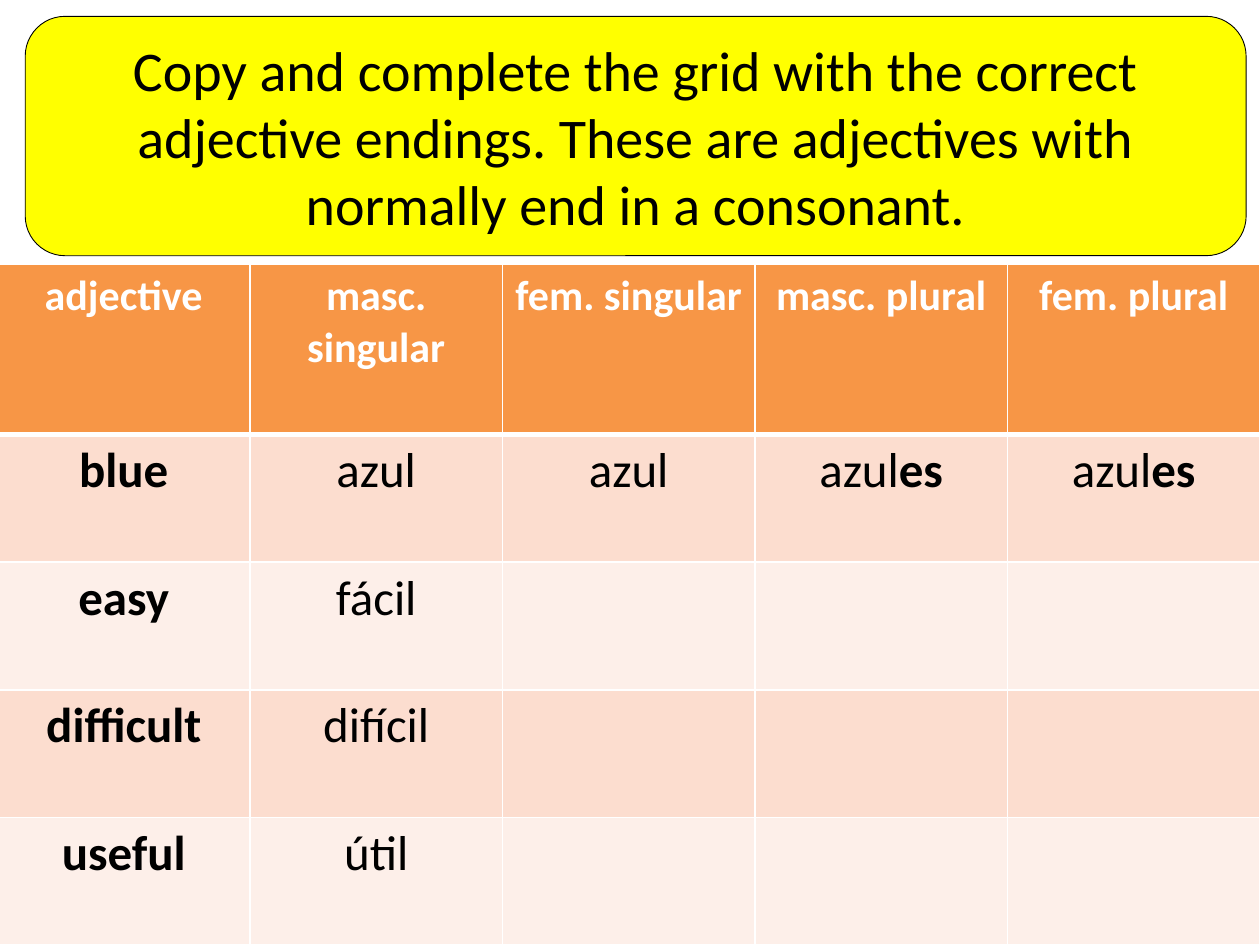
from dataclasses import dataclass

from lxml import etree
from pptx import Presentation
from pptx.dml.color import RGBColor
from pptx.enum.shapes import MSO_SHAPE
from pptx.enum.text import MSO_ANCHOR, PP_ALIGN
from pptx.oxml.ns import qn
from pptx.util import Inches, Pt

ROUNDED = MSO_SHAPE.ROUNDED_RECTANGLE
CENTER = PP_ALIGN.CENTER
MIDDLE = MSO_ANCHOR.MIDDLE


@dataclass(frozen=True)
class Theme:
    font: str = "Calibri"
    black: str = "000000"
    white: str = "FFFFFF"
    yellow: str = "FFFF00"
    orange: str = "F79646"
    bands: tuple = ("FCDDCF", "FDEFE9")
    title_size: int = 32
    header_size: int = 24
    body_size: int = 28


THEME = Theme()

INSTRUCTION = ("Copy and complete the grid with the correct adjective endings. "
               "These are adjectives with normally end in a consonant.")
HEADERS = ["adjective", "masc. singular", "fem. singular", "masc. plural", "fem. plural"]
# Each row: the English adjective, then (stem, ending) for each Spanish form.
ADJECTIVES = [
    ("blue", [("azul", ""), ("azul", ""), ("azul", "es"), ("azul", "es")]),
    ("easy", [("fácil", "")]),
    ("difficult", [("difícil", "")]),
    ("useful", [("útil", "")]),
]


def add_text(frame, text, size, color=THEME.black, bold=False):
    """Append a centred run to the frame's first paragraph."""
    para = frame.paragraphs[0]
    para.alignment = CENTER
    span = para.add_run()
    span.text = text
    span.font.name = THEME.font
    span.font.size = Pt(size)
    span.font.bold = bold
    span.font.color.rgb = RGBColor.from_string(color)


def style_cell(cell, fill, bottom_width=1, top_width=1):
    """Give the cell white borders, then its fill."""
    properties = cell._tc.get_or_add_tcPr()
    widths = {"a:lnL": 1, "a:lnR": 1, "a:lnT": top_width, "a:lnB": bottom_width}
    for tag, width in widths.items():
        line = etree.SubElement(properties, qn(tag), w=str(Pt(width)))
        solid = etree.SubElement(line, qn("a:solidFill"))
        etree.SubElement(solid, qn("a:srgbClr"), val=THEME.white)
    cell.fill.solid()
    cell.fill.fore_color.rgb = RGBColor.from_string(fill)


def add_adjective_grid(page, left, top, width, height, header_height):
    row_count, column_count = len(ADJECTIVES) + 1, len(HEADERS)
    grid = page.shapes.add_table(row_count, column_count, left, top, width, height).table
    for column in grid.columns:
        column.width = width // column_count
    for index, row in enumerate(grid.rows):
        row.height = (height - header_height) // len(ADJECTIVES) if index else header_height

    for cell, header in zip(grid.rows[0].cells, HEADERS):
        style_cell(cell, THEME.orange, bottom_width=3)
        add_text(cell.text_frame, header, THEME.header_size, THEME.white, bold=True)

    for index, (english, forms) in enumerate(ADJECTIVES):
        cells = list(grid.rows[index + 1].cells)
        for cell in cells:
            style_cell(cell, THEME.bands[index % 2], top_width=1 if index else 3)
        add_text(cells[0].text_frame, english, THEME.body_size, bold=True)
        for cell, (stem, ending) in zip(cells[1:], forms):
            add_text(cell.text_frame, stem, THEME.body_size)
            if ending:
                add_text(cell.text_frame, ending, THEME.body_size, bold=True)


def add_instruction(page, left, top, width, height):
    box = page.shapes.add_shape(ROUNDED, left, top, width, height)
    box.shadow.inherit = False
    box.fill.solid()
    box.fill.fore_color.rgb = RGBColor.from_string(THEME.yellow)
    box.line.color.rgb = RGBColor.from_string(THEME.black)
    box.line.width = Pt(0.5)
    box.text_frame.word_wrap = True
    box.text_frame.vertical_anchor = MIDDLE
    add_text(box.text_frame, INSTRUCTION, THEME.title_size)


def main():
    deck = Presentation()
    deck.slide_width, deck.slide_height = Inches(10), Inches(7.5)
    page = deck.slides.add_slide(deck.slide_layouts[6])
    add_adjective_grid(page, Inches(-0.02), Inches(2.1), Inches(10.02), Inches(5.4),
                       header_height=Inches(1.35))
    add_instruction(page, Inches(0.2), Inches(0.13), Inches(9.69), Inches(1.9))
    deck.save("out.pptx")


if __name__ == "__main__":
    main()
